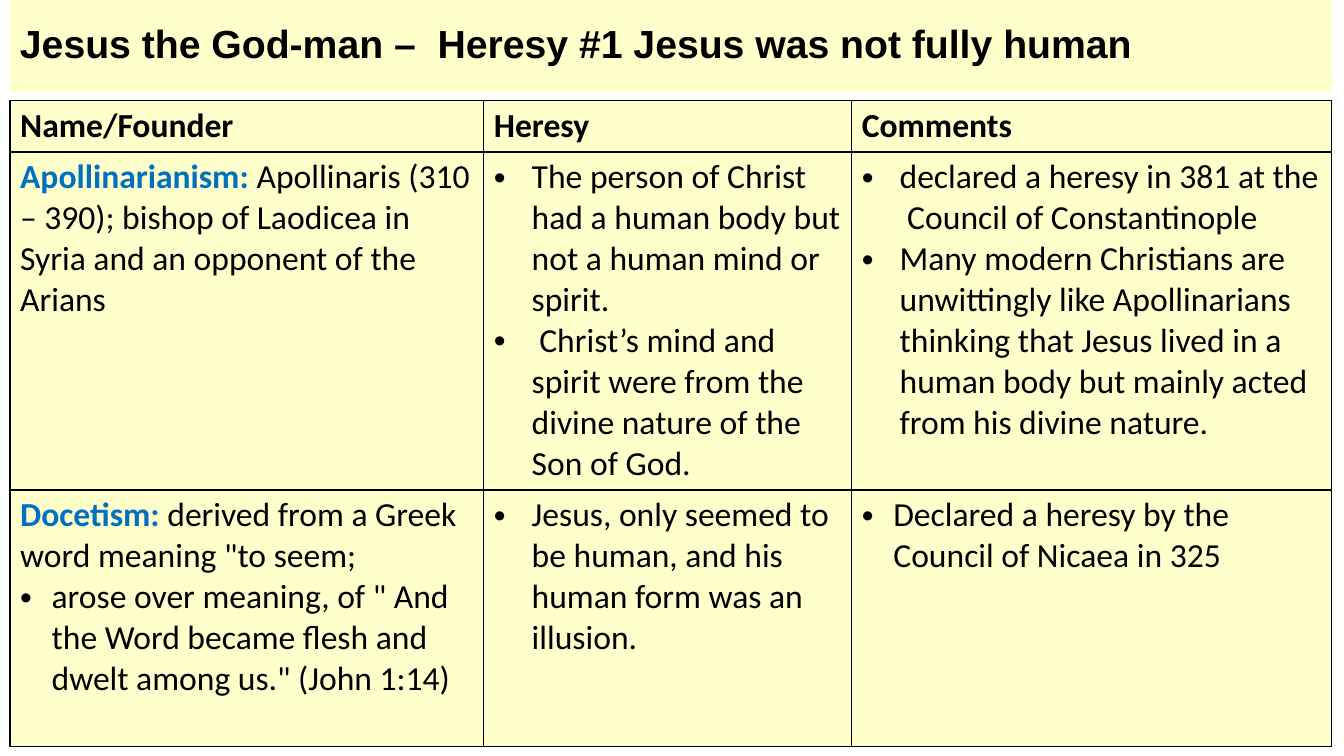
from lxml import etree
from pptx import Presentation
from pptx import util as u
from pptx.dml.color import RGBColor
from pptx.enum import shapes, text
from pptx.oxml.ns import qn

COLORS = {"cream": "FFFFCC", "ink": "000000", "blue": "0070C0"}
TITLE = "Jesus the God-man –  Heresy #1 Jesus was not fully human"
HEADERS = ["Name/Founder", "Heresy", "Comments"]
WIDE, NARROW = 27, 22.5  # bullet indents

# Each cell is a list of paragraphs: (bullet indent, blue lead-in, body)
BODY = [
    [
        [(0, "Apollinarianism: ", "Apollinaris (310 – 390); bishop of Laodicea in "
          "Syria and an opponent of the Arians")],
        [(WIDE, "", "The person of Christ had a human body but not a human mind or spirit."),
         (WIDE, "", " Christ’s mind and spirit were from the divine nature of the Son of God.")],
        [(WIDE, "", "declared a heresy in 381 at the  Council of Constantinople"),
         (WIDE, "", "Many modern Christians are unwittingly like Apollinarians thinking that "
          "Jesus lived in a human body but mainly acted from his divine nature.")],
    ],
    [
        [(0, "Docetism: ", 'derived from a Greek word meaning "to seem;'),
         (NARROW, "", 'arose over meaning, of " And the Word became flesh and '
          'dwelt among us." (John 1:14)')],
        [(WIDE, "", "Jesus, only seemed to be human, and his human form was an illusion.")],
        [(NARROW, "", "Declared a heresy by the Council of Nicaea in 325")],
    ],
]

LEFT, WIDTH = 7.2, 944
TITLE_HEIGHT, TABLE_TOP = 66, 72
COLUMN_WIDTHS = [338.4, 262.8, 342.8]
ROW_HEIGHTS = [36.5, 241.5, 183]


def paint(fill, color):
    fill.solid()
    fill.fore_color.rgb = RGBColor.from_string(COLORS[color])


def add_span(para, words, font="Calibri", size=24, color="ink", bold=False):
    span = para.add_run()
    span.text = words
    span.font.name, span.font.size, span.font.bold = font, u.Pt(size), bold
    span.font.color.rgb = RGBColor.from_string(COLORS[color])


def add_bullet(para, indent):
    properties = para._p.get_or_add_pPr()
    properties.set("marL", str(u.Pt(indent)))
    properties.set("indent", str(-u.Pt(indent)))
    etree.SubElement(properties, qn("a:buFont")).set("typeface", "Arial")
    etree.SubElement(properties, qn("a:buChar")).set("char", "•")


def add_borders(cell):
    """Draw all four sides; the lines must precede the cell's fill."""
    properties = cell._tc.get_or_add_tcPr()
    for place, side in enumerate(("a:lnL", "a:lnR", "a:lnT", "a:lnB")):
        line = etree.Element(qn(side), w=str(u.Pt(1)))
        fill = etree.SubElement(line, qn("a:solidFill"))
        etree.SubElement(fill, qn("a:srgbClr")).set("val", COLORS["ink"])
        properties.insert(place, line)


def fill_cell(cell, paragraphs, bold=False):
    paint(cell.fill, "cream")
    add_borders(cell)
    frame = cell.text_frame
    for number, (indent, lead, body) in enumerate(paragraphs):
        para = frame.add_paragraph() if number else frame.paragraphs[0]
        if indent:
            add_bullet(para, indent)
        if lead:
            add_span(para, lead, color="blue", bold=True)
        add_span(para, body, bold=bold)


def add_title(page):
    box = page.shapes.add_shape(shapes.MSO_SHAPE.RECTANGLE, u.Pt(LEFT), 0,
                                u.Pt(WIDTH), u.Pt(TITLE_HEIGHT))
    box.shadow.inherit = False
    box.line.fill.background()
    paint(box.fill, "cream")
    frame = box.text_frame
    frame.word_wrap = True
    frame.vertical_anchor = text.MSO_ANCHOR.MIDDLE
    para = frame.paragraphs[0]
    para.alignment = text.PP_ALIGN.LEFT
    para.line_spacing = 0.9
    add_span(para, TITLE, font="Arial", size=28, bold=True)


def add_heresies(page):
    rows = [[[(0, "", header)] for header in HEADERS]] + BODY
    table = page.shapes.add_table(len(rows), len(HEADERS), u.Pt(LEFT), u.Pt(TABLE_TOP),
                                  u.Pt(WIDTH), u.Pt(sum(ROW_HEIGHTS))).table
    table.horz_banding = False
    for column, width in zip(table.columns, COLUMN_WIDTHS):
        column.width = u.Pt(width)
    for number, (row, height) in enumerate(zip(table.rows, ROW_HEIGHTS)):
        row.height = u.Pt(height)
        for cell, paragraphs in zip(row.cells, rows[number]):
            fill_cell(cell, paragraphs, bold=number == 0)


def main():
    deck = Presentation()
    deck.slide_width, deck.slide_height = u.Pt(960), u.Pt(540)
    page = deck.slides.add_slide(deck.slide_layouts[6])
    add_title(page)
    add_heresies(page)
    deck.save("out.pptx")


if __name__ == "__main__":
    main()
